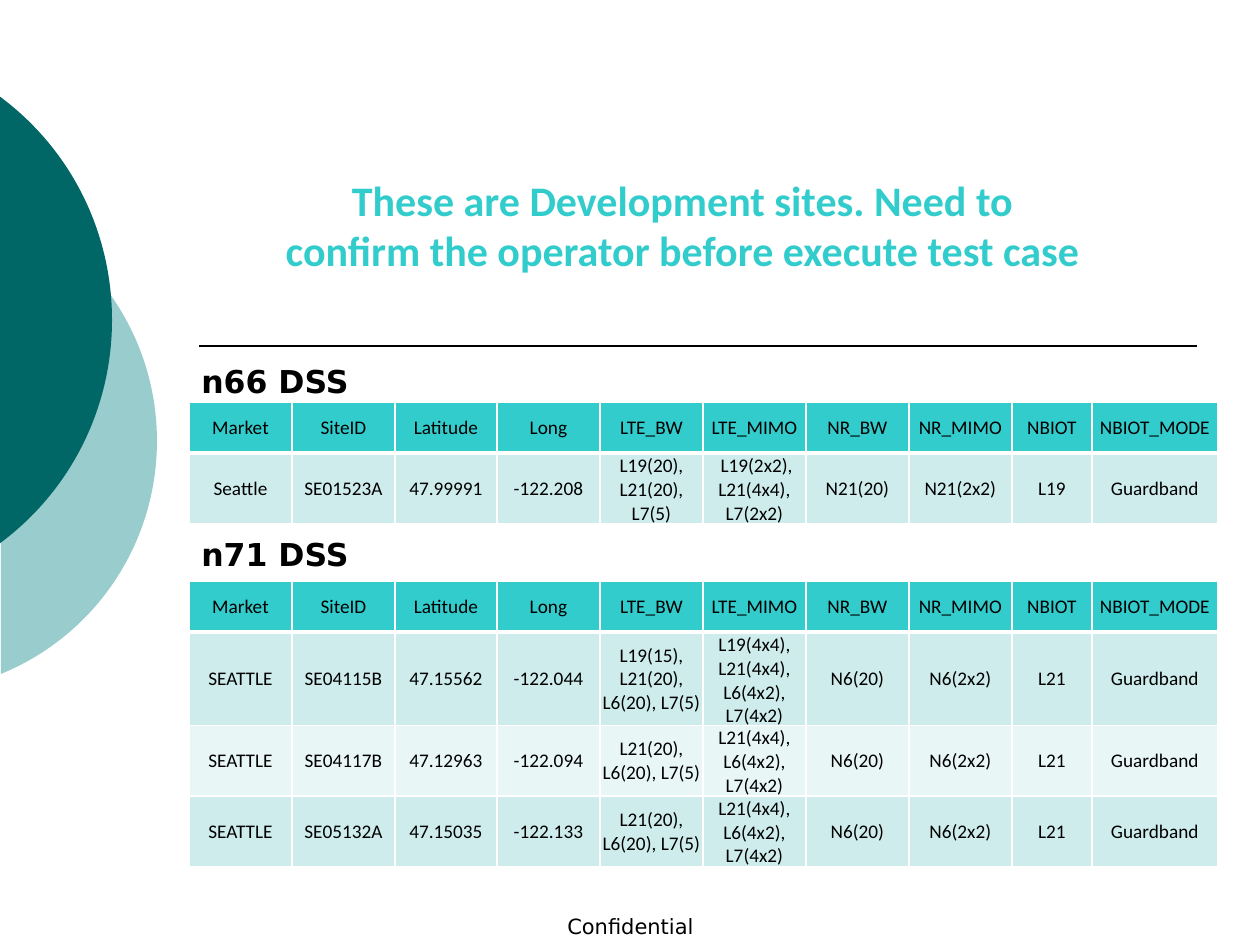
import lxml.etree
import pptx
import pptx.dml.color
import pptx.enum.shapes
import pptx.enum.text
import pptx.oxml.ns
import pptx.util

PX = 914400 / 126
WHITE = pptx.dml.color.RGBColor(0xFF, 0xFF, 0xFF)
BLACK = pptx.dml.color.RGBColor(0x00, 0x00, 0x00)
TURQUOISE = pptx.dml.color.RGBColor(0x33, 0xCC, 0xCC)
TEAL = pptx.dml.color.RGBColor(0x00, 0x66, 0x66)
PALE_TEAL = pptx.dml.color.RGBColor(0x99, 0xCC, 0xCC)
BAND_FILLS = (
    pptx.dml.color.RGBColor(0xCE, 0xEC, 0xEC),
    pptx.dml.color.RGBColor(0xE8, 0xF6, 0xF6),
)

TOP = pptx.enum.text.MSO_ANCHOR.TOP
MIDDLE = pptx.enum.text.MSO_ANCHOR.MIDDLE
BOTTOM = pptx.enum.text.MSO_ANCHOR.BOTTOM
LEFT = pptx.enum.text.PP_ALIGN.LEFT
CENTER = pptx.enum.text.PP_ALIGN.CENTER

COLUMN_WIDTHS = [103, 103, 102] + [103] * 5 + [80, 126]
ROW_HEIGHT = 51  # rows grow to hold their wrapped text
HEADERS = ["Market", "SiteID", "Latitude", "Long", "LTE_BW", "LTE_MIMO",
           "NR_BW", "NR_MIMO", "NBIOT", "NBIOT_MODE"]
N66_SITES = [
    ["Seattle", "SE01523A", "47.99991", "-122.208", "L19(20), L21(20), L7(5)",
     " L19(2x2), L21(4x4), L7(2x2)", "N21(20)", "N21(2x2)", "L19", "Guardband"],
]
N71_SITES = [
    ["SEATTLE", "SE04115B", "47.15562", "-122.044", "L19(15), L21(20), L6(20), L7(5)",
     "L19(4x4), L21(4x4), L6(4x2), L7(4x2)", "N6(20)", "N6(2x2)", "L21", "Guardband"],
    ["SEATTLE", "SE04117B", "47.12963", "-122.094", "L21(20), L6(20), L7(5)",
     "L21(4x4), L6(4x2), L7(4x2)", "N6(20)", "N6(2x2)", "L21", "Guardband"],
    ["SEATTLE", "SE05132A", "47.15035", "-122.133", "L21(20), L6(20), L7(5)",
     "L21(4x4), L6(4x2), L7(4x2)", "N6(20)", "N6(2x2)", "L21", "Guardband"],
]


def emu(pixels):
    return pptx.util.Emu(round(pixels * PX))


def format_text(text_frame, size, color, font_name, bold, alignment):
    for paragraph in text_frame.paragraphs:
        paragraph.alignment = alignment
        for run in paragraph.runs:
            run.font.size = pptx.util.Pt(size)
            run.font.name = font_name
            run.font.bold = bold
            run.font.color.rgb = color


def add_text(slide, box, text, size, color=BLACK, font_name="DejaVu Sans",
             bold=False, alignment=LEFT, anchor=TOP):
    shape = slide.shapes.add_textbox(*map(emu, box))
    text_frame = shape.text_frame
    text_frame.word_wrap = True
    text_frame.vertical_anchor = anchor
    text_frame.text = text
    format_text(text_frame, size, color, font_name, bold, alignment)


def add_circle_segment(slide, left, top, diameter, upper_arc, color):
    """Draw a segment from its upper arc: start, two controls and rightmost point.

    The points are offsets in the circle's box; the lower arc mirrors the upper one.
    """
    right, bottom = left + diameter, top + diameter
    builder = slide.shapes.build_freeform(emu(left), emu(top))
    builder.add_line_segments(
        [(emu(right), emu(top)), (emu(right), emu(bottom)), (emu(left), emu(bottom))])
    shape = builder.convert_to_shape()
    shape.shadow.inherit = False
    shape.fill.solid()
    shape.fill.fore_color.rgb = color
    shape.line.fill.background()

    lower_arc = [(x, diameter - y) for x, y in reversed(upper_arc)]
    outline = next(shape._element.iter(pptx.oxml.ns.qn("a:path")))
    for command in list(outline):
        outline.remove(command)
    for name, points in (("moveTo", upper_arc[:1]), ("cubicBezTo", upper_arc[1:]),
                         ("cubicBezTo", lower_arc[1:]), ("close", [])):
        command = lxml.etree.SubElement(outline, pptx.oxml.ns.qn(f"a:{name}"))
        for x, y in points:
            lxml.etree.SubElement(
                command, pptx.oxml.ns.qn("a:pt"), x=str(emu(x)), y=str(emu(y)))


def add_rule(slide, left, y, right):
    connector = slide.shapes.add_connector(
        pptx.enum.shapes.MSO_CONNECTOR.STRAIGHT, emu(left), emu(y), emu(right), emu(y))
    connector.line.color.rgb = BLACK
    connector.line.width = pptx.util.Pt(1)
    lxml.etree.SubElement(connector._element.spPr, pptx.oxml.ns.qn("a:effectLst"))


def add_cell_borders(cell, top, bottom):
    """Add white borders: 1 pt at the sides, the given points above and below."""
    properties = cell._tc.get_or_add_tcPr()
    for side, points in (("L", 1), ("R", 1), ("T", top), ("B", bottom)):
        border = lxml.etree.SubElement(
            properties, pptx.oxml.ns.qn(f"a:ln{side}"), w=str(pptx.util.Pt(points)))
        fill = lxml.etree.SubElement(border, pptx.oxml.ns.qn("a:solidFill"))
        lxml.etree.SubElement(fill, pptx.oxml.ns.qn("a:srgbClr"), val=str(WHITE))


def format_cell(cell, row_index):
    is_header = row_index == 0
    add_cell_borders(cell, top=3 if row_index == 1 else 1, bottom=3 if is_header else 1)
    cell.fill.solid()
    cell.fill.fore_color.rgb = TURQUOISE if is_header else BAND_FILLS[(row_index - 1) % 2]
    cell.margin_left = cell.margin_right = cell.margin_top = emu(1)
    cell.margin_bottom = 0
    cell.vertical_anchor = MIDDLE
    format_text(cell.text_frame, 11, BLACK, "Calibri", False, CENTER)


def add_site_table(slide, left, top, height, sites):
    rows = [HEADERS] + sites
    frame = slide.shapes.add_table(
        len(rows), len(HEADERS), emu(left), emu(top), emu(sum(COLUMN_WIDTHS)), emu(height))
    table = frame.table
    table.first_row = table.horz_banding = False
    for column, width in zip(table.columns, COLUMN_WIDTHS):
        column.width = emu(width)
    for row_index, (row, values) in enumerate(zip(table.rows, rows)):
        row.height = emu(ROW_HEIGHT)
        for cell, value in zip(row.cells, values):
            cell.text_frame.text = value
            format_cell(cell, row_index)
    frame.height = emu(height)


def main():
    presentation = pptx.Presentation()
    presentation.slide_width = emu(1260)
    presentation.slide_height = emu(945)
    slide = presentation.slides.add_slide(presentation.slide_layouts[6])

    add_rule(slide, 199, 346, 1197)
    add_circle_segment(slide, -346, 189, 504,
                       [(347, 19), (442, 58), (503, 150), (503, 252)], PALE_TEAL)
    add_circle_segment(slide, -444, 42, 556,
                       [(443, 54), (515, 107), (556, 190), (556, 278)], TEAL)
    add_text(slide, (431, 882, 399, 63), "Confidential", 12,
             alignment=CENTER, anchor=BOTTOM)
    add_text(slide, (273, 168, 819, 165),
             "These are Development sites. Need to confirm the operator "
             "before execute test case",
             24, TURQUOISE, "Calibri", True, CENTER)
    add_site_table(slide, 189, 402, 122, N66_SITES)
    add_site_table(slide, 189, 581, 286, N71_SITES)
    for top, heading in ((356, "n66 DSS"), (529, "n71 DSS")):
        add_text(slide, (189, top, 242, 50), heading, 18, bold=True)

    presentation.save("out.pptx")


if __name__ == "__main__":
    main()
